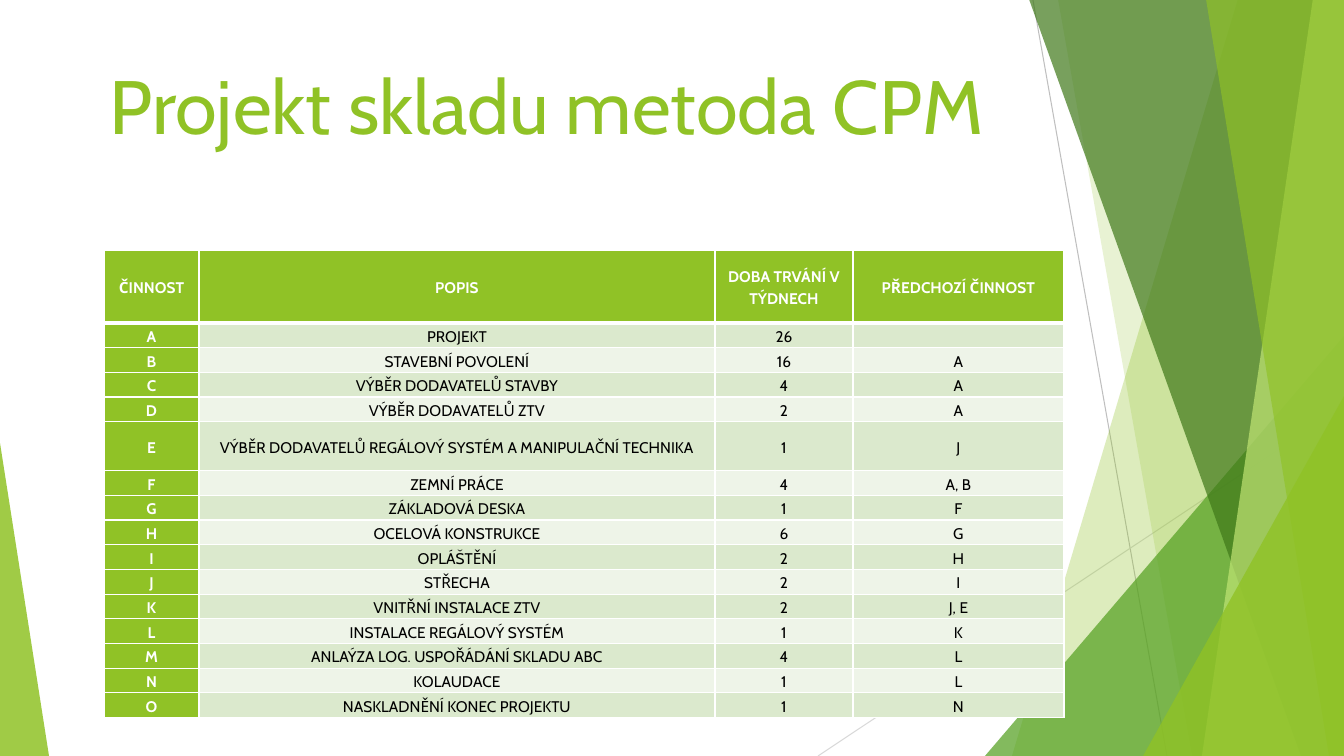
"""Build the slide with the activity table of a warehouse project (CPM)."""
from lxml.etree import SubElement
from pptx import Presentation
from pptx.dml.color import RGBColor
from pptx.enum.shapes import MSO_CONNECTOR, MSO_SHAPE
from pptx.enum.text import MSO_ANCHOR, MSO_AUTO_SIZE, PP_ALIGN
from pptx.oxml.ns import qn
from pptx.util import Pt

TITLE = "Projekt skladu metoda CPM"
HEADER = ("ČINNOST", "POPIS", "DOBA TRVÁNÍ V TÝDNECH", "PŘEDCHOZÍ ČINNOST")
ACTIVITIES = [
    ("A", "PROJEKT", "26", ""),
    ("B", "STAVEBNÍ POVOLENÍ", "16", "A"),
    ("C", "VÝBĚR DODAVATELŮ STAVBY", "4", "A"),
    ("D", "VÝBĚR DODAVATELŮ ZTV", "2", "A"),
    ("E", "VÝBĚR DODAVATELŮ REGÁLOVÝ SYSTÉM A MANIPULAČNÍ TECHNIKA", "1", "J"),
    ("F", "ZEMNÍ PRÁCE", "4", "A, B"),
    ("G", "ZÁKLADOVÁ DESKA", "1", "F"),
    ("H", "OCELOVÁ KONSTRUKCE", "6", "G"),
    ("I", "OPLÁŠTĚNÍ", "2", "H"),
    ("J", "STŘECHA", "2", "I"),
    ("K", "VNITŘNÍ INSTALACE ZTV", "2", "J, E"),
    ("L", "INSTALACE REGÁLOVÝ SYSTÉM", "1", "K"),
    ("M", "ANLAÝZA LOG. USPOŘÁDÁNÍ SKLADU ABC", "4", "L"),
    ("N", "KOLAUDACE", "1", "L"),
    ("O", "NASKLADNĚNÍ KONEC PROJEKTU", "1", "N"),
]
COLORS = {
    "lime": "90C226", "green": "54A021", "forest": "3F7819", "pale": "C0E474",
    "gray": "BFBFBF", "silver": "D9D9D9", "white": "FFFFFF", "black": "000000",
    "band": "DBE9CD", "light": "EEF4E8",
}
FONT = "Cabin"
SCALE = 914400 / 100.8
SLIDE_WIDTH, SLIDE_HEIGHT = 1344, 756
TITLE_BOX = {"left": 78, "top": 54, "width": 937, "height": 337}
TABLE_BOX = (104, 250, 960, 468)
COLUMN_WIDTHS = (95, 516, 138, 211)
HEADER_HEIGHT, TALL_HEIGHT, TALL_ACTIVITY = 73, 49, "E"
RAYS = [
    ((1033, 0, 1167, 756), "gray"),
    ((1344, 406, 818, 756), "silver"),
]
BLADE_TOP = -1
BLADES_BEHIND = [(1238, 1012, "lime", 30), (1058, 1192, "lime", 20)]
BLADES_FRONT = [(1029, 1301, "forest", 70), (1313, 1202, "pale", 70),
                (1206, 1329, "lime", 65)]
CORNER_BEHIND = [((985, 336, 359, 420), 1, "green", 72)]
CORNERS_FRONT = [((1143, 396, 201, 360), 1, "lime", 80),
                 ((0, 443, 49, 313), 0, "lime", 85)]


def px(length):
    return round(length * SCALE)


def rgb(name):
    return RGBColor.from_string(COLORS[name])


def apply(target, values):
    for attribute, value in values.items():
        setattr(target, attribute, value)


def paint(shape, color, opacity):
    shape.shadow.inherit = False
    shape.fill.solid()
    shape.fill.fore_color.rgb = rgb(color)
    shape.line.fill.background()
    tint = shape.fill._xPr.find(".//" + qn("a:srgbClr"))
    SubElement(tint, qn("a:alpha"), val=str(opacity * 1000))


def add_rays(shapes):
    for ends, color in RAYS:
        ray = shapes.add_connector(MSO_CONNECTOR.STRAIGHT, *map(px, ends))
        ray.line.color.rgb = rgb(color)
        ray.line.width = Pt(0.75)
        SubElement(ray._element.spPr, qn("a:effectLst"))


def add_blades(shapes, blades):
    for top_x, bottom_x, color, opacity in blades:
        outline = shapes.build_freeform(top_x, BLADE_TOP, SCALE)
        outline.add_line_segments([(SLIDE_WIDTH, BLADE_TOP),
                                   (SLIDE_WIDTH, SLIDE_HEIGHT),
                                   (bottom_x, SLIDE_HEIGHT)])
        paint(outline.convert_to_shape(), color, opacity)


def add_corners(shapes, corners):
    for box, apex, color, opacity in corners:
        corner = shapes.add_shape(MSO_SHAPE.ISOSCELES_TRIANGLE, *map(px, box))
        corner.adjustments[0] = apex
        paint(corner, color, opacity)


def write(paragraph, text, font):
    run = paragraph.add_run()
    run.text = text
    color = font.pop("color")
    apply(run.font, {"name": FONT, **font})
    run.font.color.rgb = rgb(color)


def add_borders(cell, row):
    widths = {"lnL": 1, "lnR": 1, "lnT": 3 if row == 1 else 1, "lnB": 3 if row == 0 else 1}
    properties = cell._tc.get_or_add_tcPr()
    for side, width in widths.items():
        border = SubElement(properties, qn("a:" + side), w=str(Pt(width)))
        fill = SubElement(border, qn("a:solidFill"))
        SubElement(fill, qn("a:srgbClr"), val=COLORS["white"])


def format_cell(cell, text, row, column):
    heading = row == 0 or column == 0
    apply(cell, {"vertical_anchor": MSO_ANCHOR.MIDDLE, "margin_left": px(7),
                 "margin_right": px(7), "margin_top": 0, "margin_bottom": 0})
    add_borders(cell, row)
    cell.fill.solid()
    cell.fill.fore_color.rgb = rgb("lime" if heading else "band" if row % 2 else "light")
    paragraph = cell.text_frame.paragraphs[0]
    apply(paragraph, {"alignment": PP_ALIGN.CENTER, "line_spacing": 1.15})
    if text:
        write(paragraph, text, {"size": Pt(11), "bold": heading,
                                "color": "white" if heading else "black"})
    else:
        paragraph._p.get_or_add_endParaRPr().set("sz", "1100")


def add_activities(shapes):
    rows = [HEADER, *ACTIVITIES]
    table = shapes.add_table(len(rows), len(HEADER), *map(px, TABLE_BOX)).table
    apply(table, {"first_row": False, "horz_banding": False})
    for column, width in zip(table.columns, COLUMN_WIDTHS):
        column.width = px(width)
    row_height = (TABLE_BOX[3] - HEADER_HEIGHT - TALL_HEIGHT) / (len(ACTIVITIES) - 1)
    special_heights = {HEADER[0]: HEADER_HEIGHT, TALL_ACTIVITY: TALL_HEIGHT}
    for row, texts in enumerate(rows):
        table.rows[row].height = px(special_heights.get(texts[0], row_height))
        for column, text in enumerate(texts):
            format_cell(table.cell(row, column), text, row, column)


def format_title(title):
    apply(title, {side: px(length) for side, length in TITLE_BOX.items()})
    apply(title.text_frame, {"word_wrap": True, "auto_size": MSO_AUTO_SIZE.NONE,
                             "vertical_anchor": MSO_ANCHOR.TOP})
    heading = title.text_frame.paragraphs[0]
    heading.alignment = PP_ALIGN.CENTER
    write(heading, TITLE, {"size": Pt(54), "bold": False, "color": "lime"})


def main():
    deck = Presentation()
    apply(deck, {"slide_width": px(SLIDE_WIDTH), "slide_height": px(SLIDE_HEIGHT)})
    shapes = deck.slides.add_slide(deck.slide_layouts[5]).shapes
    add_rays(shapes)
    add_blades(shapes, BLADES_BEHIND)
    add_corners(shapes, CORNER_BEHIND)
    add_blades(shapes, BLADES_FRONT)
    add_corners(shapes, CORNERS_FRONT)
    title = shapes.title
    format_title(title)
    shapes._spTree.append(title._element)
    add_activities(shapes)
    deck.save("out.pptx")


if __name__ == "__main__":
    main()
